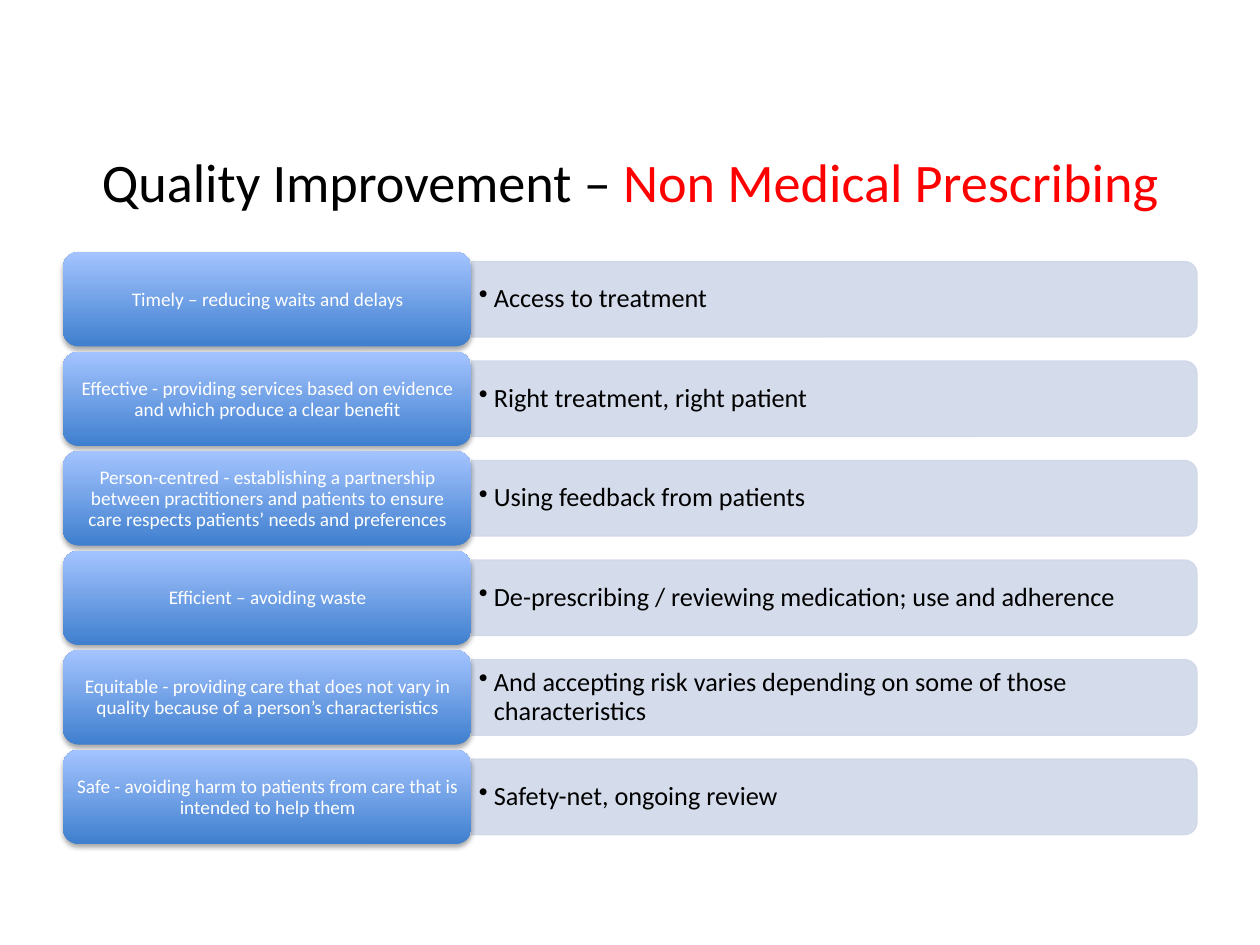
from lxml import etree
from pptx import Presentation
from pptx.dml.color import RGBColor
from pptx.enum.shapes import MSO_SHAPE
from pptx.enum.text import MSO_ANCHOR, PP_ALIGN
from pptx.oxml.ns import qn
from pptx.util import Inches, Pt

ROUNDED = MSO_SHAPE.ROUNDED_RECTANGLE
ROUNDED_TOP = MSO_SHAPE.ROUND_2_SAME_RECTANGLE
MIDDLE = MSO_ANCHOR.MIDDLE
LEFT, CENTER = PP_ALIGN.LEFT, PP_ALIGN.CENTER

FIRST_TOP, PITCH = 2.0, 0.79
LABEL_LEFT, LABEL_WIDTH, LABEL_HEIGHT = 0.5, 3.24, 0.75
BAR_LEFT, BAR_WIDTH, BAR_HEIGHT = 3.74, 5.76, 0.6

ROWS = [
    ("Timely – reducing waits and delays", "Access to treatment"),
    ("Effective - providing services based on evidence and which produce a clear benefit",
     "Right treatment, right patient"),
    ("Person-centred - establishing a partnership between practitioners and patients "
     "to ensure care respects patients’ needs and preferences",
     "Using feedback from patients"),
    ("Efficient – avoiding waste",
     "De-prescribing / reviewing medication; use and adherence"),
    ("Equitable - providing care that does not vary in quality because of a person’s "
     "characteristics",
     "And accepting risk varies depending on some of those characteristics"),
    ("Safe - avoiding harm to patients from care that is intended to help them",
     "Safety-net, ongoing review"),
]


def color(hex_string):
    return RGBColor.from_string(hex_string)


def add_element(parent, tag, **attributes):
    return etree.SubElement(parent, qn(tag), {k: str(v) for k, v in attributes.items()})


class SlideBuilder:
    FONT = "Calibri"
    BLACK, WHITE, RED = "000000", "FFFFFF", "FF0000"
    BAR = "D0D8E8"
    GRADIENT = ("3F7FCE", "A4C4FF")

    def __init__(self, slide):
        self.slide = slide

    def text(self, left, top, width, height, runs, size, align=CENTER,
             insets=(0.1, 0.05), bullet=False):
        """Add a vertically centred text box; runs are (text, colour) pairs."""
        box = self.slide.shapes.add_textbox(
            Inches(left), Inches(top), Inches(width), Inches(height))
        frame = box.text_frame
        frame.word_wrap = True
        frame.vertical_anchor = MIDDLE
        frame.margin_left = frame.margin_right = Inches(insets[0])
        frame.margin_top = frame.margin_bottom = Inches(insets[1])
        paragraph = frame.paragraphs[0]
        paragraph.alignment = align
        paragraph.line_spacing = 0.9
        if bullet:
            paragraph.level = 1
            properties = paragraph._p.get_or_add_pPr()
            properties.set("marL", str(Inches(0.12)))
            properties.set("indent", str(-Inches(0.12)))
            add_element(properties, "a:buChar", char="•")
        paragraph.font.name = self.FONT
        paragraph.font.size = Pt(size)
        for text, run_color in runs:
            run = paragraph.add_run()
            run.text = text
            run.font.color.rgb = color(run_color)

    def bar(self, middle, text):
        """Add a bar rounded at its right end, with a bullet on it."""
        shape = self.slide.shapes.add_shape(
            ROUNDED_TOP,
            Inches(BAR_LEFT + (BAR_WIDTH - BAR_HEIGHT) / 2),
            Inches(middle - BAR_WIDTH / 2),
            Inches(BAR_HEIGHT), Inches(BAR_WIDTH))
        shape.rotation = 90
        shape.shadow.inherit = False
        shape.fill.solid()
        shape.fill.fore_color.rgb = color(self.BAR)
        shape.line.color.rgb = color(self.BAR)
        shape.line.width = Pt(0.75)
        for rgb in shape._element.spPr.iter(qn("a:srgbClr")):
            add_element(rgb, "a:alpha", val=90000)
        self.text(BAR_LEFT, middle - 0.27, 5.73, 0.54, [(text, self.BLACK)], 15,
                  LEFT, (0.06, 0.03), bullet=True)

    def label(self, top, text):
        shape = self.slide.shapes.add_shape(
            ROUNDED, Inches(LABEL_LEFT), Inches(top),
            Inches(LABEL_WIDTH), Inches(LABEL_HEIGHT))
        shape.fill.gradient()
        shape.fill.gradient_angle = 90
        for stop, stop_color in zip(shape.fill.gradient_stops, self.GRADIENT):
            stop.color.rgb = color(stop_color)
        shape.line.fill.background()
        shape.shadow.inherit = False
        effects = shape._element.spPr.find(qn("a:effectLst"))
        shadow = add_element(effects, "a:outerShdw", blurRad=Pt(3.1), dist=Pt(1.8),
                             dir=5400000, rotWithShape=0)
        rgb = add_element(shadow, "a:srgbClr", val=self.BLACK)
        add_element(rgb, "a:alpha", val=35000)
        self.text(LABEL_LEFT + 0.04, top + 0.04, 3.17, 0.68, [(text, self.WHITE)], 11,
                  insets=(0.05, 0.02))


def main():
    presentation = Presentation()
    presentation.slide_width = Inches(10)
    presentation.slide_height = Inches(7.5)
    builder = SlideBuilder(presentation.slides.add_slide(presentation.slide_layouts[6]))

    builder.text(0.5, 1.01, 9, 0.91,
                 [("Quality Improvement – ", builder.BLACK),
                  ("Non Medical Prescribing", builder.RED)], 31)
    for index, (aim, practice) in enumerate(ROWS):
        top = FIRST_TOP + index * PITCH
        builder.bar(top + LABEL_HEIGHT / 2, practice)
        builder.label(top, aim)

    presentation.save("out.pptx")


if __name__ == "__main__":
    main()
